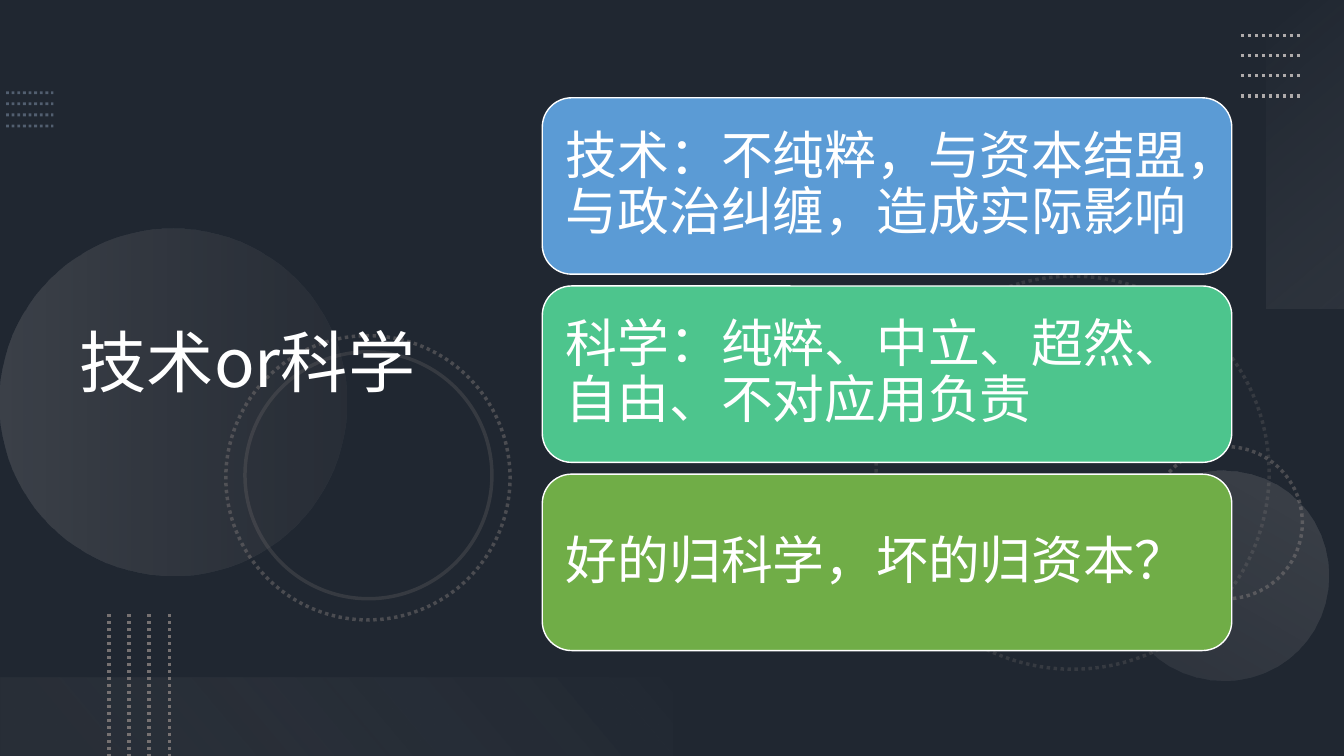
from dataclasses import dataclass
from typing import Optional

from lxml.etree import SubElement
from pptx import Presentation
from pptx.dml.color import RGBColor as RGB
from pptx.enum.dml import MSO_LINE as Dash
from pptx.enum.shapes import MSO_CONNECTOR as Link, MSO_SHAPE as Form
from pptx.enum.text import MSO_ANCHOR as Anchor, MSO_AUTO_SIZE as Fit, PP_ALIGN as Align
from pptx.oxml.ns import qn
from pptx.util import Inches, Pt

FONT = "Noto Sans CJK SC"
NAVY = RGB(0x44, 0x54, 0x6A)
BLACK = RGB(0, 0, 0)
WHITE = RGB(0xFF, 0xFF, 0xFF)
STEEL = RGB(0x84, 0x97, 0xB0)
GRAY = RGB(0x76, 0x71, 0x71)
SILVER = RGB(0xAF, 0xAB, 0xAB)
PALE = RGB(0xF5, 0xF5, 0xF5)
MIST = RGB(0xF1, 0xF0, 0xF0)
BLUE = RGB(0x5B, 0x9B, 0xD5)
MINT = RGB(0x4D, 0xC5, 0x8D)
GREEN = RGB(0x70, 0xAD, 0x47)

# The grid has ten cells to the inch
COLS, ROWS = 133.33, 75


def cell(count: float) -> int:
    return Inches(count / 10)


@dataclass
class Box:
    x: float
    y: float
    w: float
    h: float
    turn: float = 0


@dataclass
class Stop:
    tint: RGB
    alpha: int
    at: float


@dataclass
class Glow:
    box: Box
    form: Form
    angle: int
    first: Stop
    last: Stop


@dataclass
class Ring:
    box: Box
    alpha: int
    dash: Optional[Dash] = Dash.ROUND_DOT


@dataclass
class Rules:
    x: float
    y: float
    dx: float  # extent of each line
    dy: float
    step_x: float  # offset to the next line
    step_y: float
    tint: RGB
    width: float = 2.5
    alpha: int = 100


@dataclass
class Panel:
    text: str
    tint: RGB


def fade(shape, *alphas: int) -> None:
    """Give each colour of the shape its opacity in percent."""
    for tint, alpha in zip(shape.element.iter(qn("a:srgbClr")), alphas):
        SubElement(tint, qn("a:alpha")).set("val", str(alpha * 1000))


def add_form(slide, form: Form, box: Box):
    shape = slide.shapes.add_shape(form, *map(cell, (box.x, box.y, box.w, box.h)))
    shape.rotation = box.turn
    shape.shadow.inherit = False
    return shape


def add_glow(slide, glow: Glow) -> None:
    shape = add_form(slide, glow.form, glow.box)
    shape.line.fill.background()
    shape.fill.gradient()
    shape.fill.gradient_angle = 360 - glow.angle
    ends = (glow.first, glow.last)
    for stop, end in zip(shape.fill.gradient_stops, ends):
        stop.color.rgb, stop.position = end.tint, end.at
    fade(shape, *(end.alpha for end in ends))


def add_ring(slide, ring: Ring) -> None:
    shape = add_form(slide, Form.OVAL, ring.box)
    shape.fill.background()
    shape.line.color.rgb = GRAY
    shape.line.width = Pt(2.5)
    shape.line.dash_style = ring.dash
    fade(shape, ring.alpha)


def add_rules(slide, rules: Rules) -> None:
    for i in range(4):
        x, y = rules.x + i * rules.step_x, rules.y + i * rules.step_y
        ends = map(cell, (x, y, x + rules.dx, y + rules.dy))
        link = slide.shapes.add_connector(Link.STRAIGHT, *ends)
        link.line.color.rgb = rules.tint
        link.line.width = Pt(rules.width)
        link.line.dash_style = Dash.ROUND_DOT
        SubElement(link.element.spPr, qn("a:effectLst"))
        if rules.alpha < 100:
            fade(link, rules.alpha)


def write(shape, text: str, *, size: float, after: float = 0,
          pad: Optional[float] = None) -> None:
    frame = shape.text_frame
    frame.word_wrap = True
    frame.auto_size = Fit.NONE
    frame.vertical_anchor = Anchor.MIDDLE
    if pad is not None:
        frame.margin_left = frame.margin_right = cell(pad)
        frame.margin_top = frame.margin_bottom = cell(pad)
    para = frame.paragraphs[0]
    para.alignment = Align.LEFT
    para.line_spacing = 0.9
    para.space_after = Pt(after)
    run = para.add_run()
    run.text = text
    font = run.font
    font.size, font.name, font.color.rgb = Pt(size), FONT, WHITE
    SubElement(run.font._element, qn("a:ea")).set("typeface", FONT)


def add_panel(slide, panel: Panel, row: int) -> None:
    shape = add_form(slide, Form.ROUNDED_RECTANGLE, Box(53.8, 9.7 + row * 18.67, 68.4, 17.5))
    shape.fill.solid()
    shape.fill.fore_color.rgb = panel.tint
    shape.line.color.rgb = WHITE
    shape.line.width = Pt(1)
    write(shape, panel.text, size=37, after=13, pad=1.5)


RINGS = [
    Ring(Box(86.9, 27.4, 39, 39, 75), 25),
    Ring(Box(114.1, 44.3, 15.1, 15.1, 270), 50),
]
DISCS = [
    Glow(Box(0, 22.7, 34.4, 34.4, 270), Form.OVAL, 90, Stop(SILVER, 20, 0), Stop(GRAY, 10, 1)),
    Glow(Box(111, 46.7, 20.8, 20.8, 210), Form.OVAL, 90, Stop(SILVER, 10, 0), Stop(SILVER, 20, 1)),
]
HALOS = [
    Ring(Box(22.4, 33.3, 28.2, 28.2, 75), 50),
    Ring(Box(24.3, 34.9, 24.5, 24.5, 75), 25, None),
]
BANDS = [
    Glow(Box(114.2, 11.4, 30.6, 7.8, 270), Form.RECTANGLE, 140, Stop(PALE, 0, 0), Stop(SILVER, 10, 1)),
    Glow(Box(0, 67.2, 66.7, 7.8, 180), Form.RECTANGLE, 140, Stop(GRAY, 10, 0.1), Stop(MIST, 0, 1)),
]
LEFT = Rules(0.6, 9.2, 4.7, 0, 0, 1.1, STEEL, 2, 50)
RIGHT = Rules(123.1, 3.5, 6, 0, 0, 2, SILVER)
BASE = Rules(10.8, 60.9, 0, 14.1, 2, 0, GRAY)
PANELS = [
    Panel("技术：不纯粹，与资本结盟，与政治纠缠，造成实际影响", BLUE),
    Panel("科学：纯粹、中立、超然、自由、不对应用负责", MINT),
    Panel("好的归科学，坏的归资本？", GREEN),
]


def main() -> None:
    deck = Presentation()
    deck.slide_width, deck.slide_height = cell(COLS), cell(ROWS)
    slide = deck.slides.add_slide(deck.slide_layouts[5])

    # Darkened background
    slide.background.fill.solid()
    slide.background.fill.fore_color.rgb = NAVY
    veil = add_form(slide, Form.RECTANGLE, Box(0, 0, COLS, ROWS))
    veil.fill.solid()
    veil.fill.fore_color.rgb = BLACK
    veil.line.fill.background()
    fade(veil, 53)

    # Decoration, from back to front
    add_rules(slide, LEFT)
    for ring in RINGS:
        add_ring(slide, ring)
    for disc in DISCS:
        add_glow(slide, disc)
    for halo in HALOS:
        add_ring(slide, halo)
    for band in BANDS:
        add_glow(slide, band)
    add_rules(slide, RIGHT)
    add_rules(slide, BASE)

    # Title, raised above the decoration
    title = slide.shapes.title
    title.left, title.top, title.width, title.height = map(cell, (6.9, 5.4, 45.9, 61.7))
    write(title, "技术or科学", size=48)
    title.element.getparent().append(title.element)

    # Panels
    for row, panel in enumerate(PANELS):
        add_panel(slide, panel, row)

    deck.save("out.pptx")


if __name__ == "__main__":
    main()
